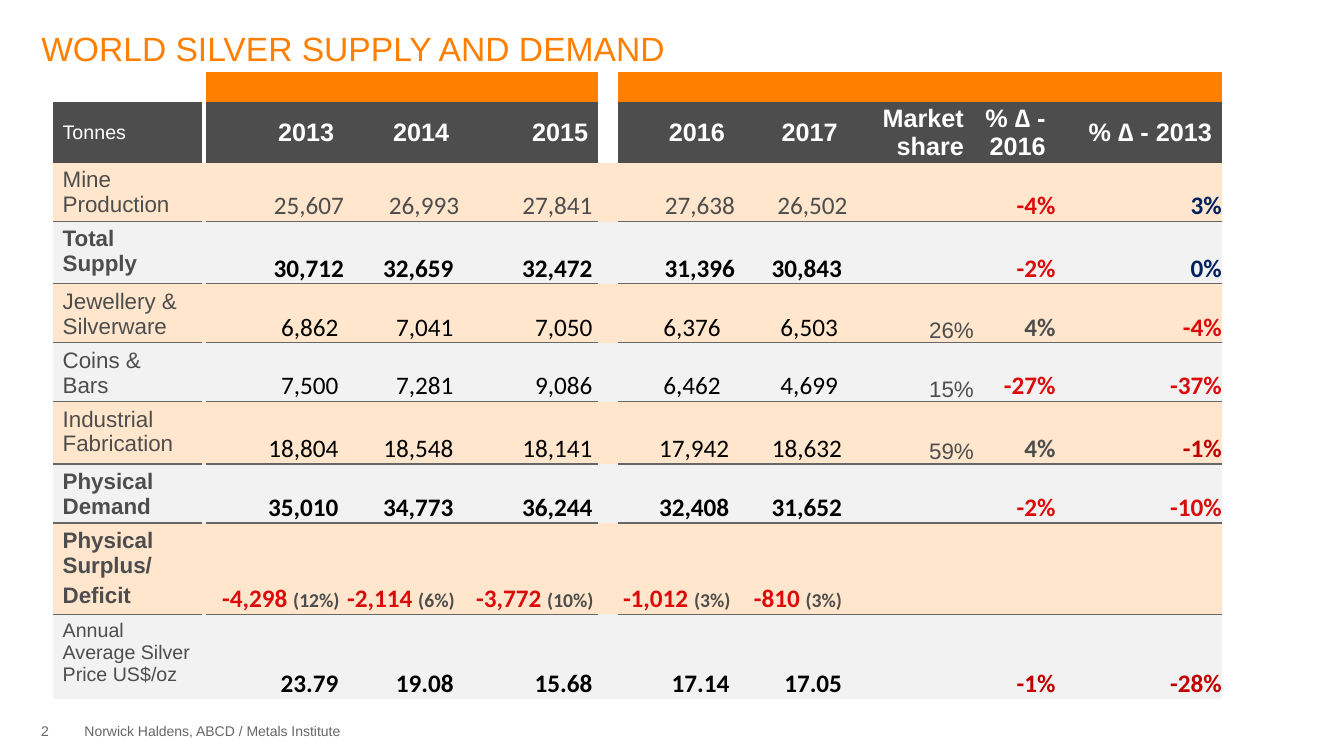
from dataclasses import dataclass

from lxml.etree import SubElement
from pptx import Presentation
from pptx.dml.color import RGBColor
from pptx.enum.text import MSO_ANCHOR, PP_ALIGN
from pptx.oxml import parse_xml
from pptx.oxml.ns import nsdecls, qn
from pptx.util import Cm, Pt

COLORS = {
    "orange": "FF8000", "peach": "FFE6CC", "light": "F2F2F2", "dark": "4D4D4D",
    "rule": "666666", "white": "FFFFFF", "black": "000000",
    "red": "DC0A0A", "deep_red": "C00000", "navy": "002060",
}
NO_STYLE = "{2D5ABB26-0587-4C30-8999-92F81FD0307C}"
COLUMN_WIDTHS = (3.76, 0.08, 3.48, 2.9, 3.5, 0.5, 2.95, 2.84, 3.18, 2.06, 4.19)
BAND_HEIGHT, HEADER_HEIGHT = 0.76, 1.47
SPACERS = (1, 5)
YEAR_COLUMNS = (2, 3, 4, 6, 7)
SHARE, CHANGE_2016, CHANGE_2013 = 8, 9, 10
HEADINGS = {2: "2013", 3: "2014", 4: "2015", 6: "2016", 7: "2017",
            SHARE: "Market share", CHANGE_2016: "% ∆ - 2016", CHANGE_2013: "% ∆ - 2013"}
GAP = 0.14  # inset that keeps a figure off the right cell edge
INDENT = 1.15  # inset of the left-aligned figures


@dataclass
class Style:
    size: float
    color: str
    bold: bool = False
    font: str = "Arial"


@dataclass
class Row:
    labels: tuple[str, ...]
    figures: tuple[str, ...]
    changes: tuple[tuple[str, str], ...] = ()
    height: float = 1.42
    label_size: float = 16
    label_bold: bool = False
    figure_bold: bool = False
    figure_color: str = "black"
    insets: tuple[float, ...] = (GAP,) * 5
    left_years: tuple[int, ...] = ()
    share: str = ""
    ratios: tuple[str, ...] = ()


LEFT_PAIR = (GAP, GAP, GAP, INDENT, INDENT)
ROWS = [
    Row(("Mine Production",), ("25,607", "26,993", "27,841", "27,638", "26,502"),
        (("-4%", "red"), ("3%", "navy")), figure_color="dark", insets=(0, 0, GAP, 0, 0)),
    Row(("Total Supply",), ("30,712", "32,659", "32,472", "31,396", "30,843"),
        (("-2%", "red"), ("0%", "navy")), height=1.57, label_bold=True,
        figure_bold=True, insets=(0, GAP, GAP, 0, GAP)),
    Row(("Jewellery & Silverware",), ("6,862", "7,041", "7,050", "6,376", "6,503"),
        (("4%", "dark"), ("-4%", "red")), insets=LEFT_PAIR, left_years=(6, 7), share="26%"),
    Row(("Coins & Bars",), ("7,500", "7,281", "9,086", "6,462", "4,699"),
        (("-27%", "red"), ("-37%", "red")), insets=LEFT_PAIR, left_years=(6, 7), share="15%"),
    Row(("Industrial Fabrication",), ("18,804", "18,548", "18,141", "17,942", "18,632"),
        (("4%", "dark"), ("-1%", "deep_red")), height=1.57, share="59%"),
    Row(("Physical Demand",), ("35,010", "34,773", "36,244", "32,408", "31,652"),
        (("-2%", "red"), ("-10%", "red")), label_bold=True, figure_bold=True),
    Row(("Physical Surplus/", "Deficit"), ("-4,298", "-2,114", "-3,772", "-1,012", "-810"),
        height=2.22, label_bold=True, figure_bold=True, figure_color="red",
        insets=(0.11, 0.11, 0.11, 0.11, GAP),
        ratios=("(12%)", "(6%)", "(10%)", "(3%)", "(3%)")),
    Row(("Annual Average Silver Price US$/oz",), ("23.79", "19.08", "15.68", "17.14", "17.05"),
        (("-1%", "deep_red"), ("-28%", "deep_red")), height=2.14, label_size=14,
        figure_bold=True),
]


def add_run(paragraph, text: str, style: Style) -> None:
    run = paragraph.add_run()
    run.text = text
    run.font.name = style.font
    run.font.size = Pt(style.size)
    run.font.bold = style.bold
    run.font.color.rgb = RGBColor.from_string(COLORS[style.color])


def clear_insets(frame) -> None:
    frame.margin_left = frame.margin_top = frame.margin_right = frame.margin_bottom = 0


def set_insets(cell, left: float, top: float, right: float) -> None:
    cell.margin_left, cell.margin_top = Cm(left), Cm(top)
    cell.margin_right, cell.margin_bottom = Cm(right), Cm(0)


def fill_cell(cell, color: str) -> None:
    cell.fill.solid()
    cell.fill.fore_color.rgb = RGBColor.from_string(COLORS[color])


def rule_below(cell) -> None:
    line = parse_xml(
        f'<a:lnB {nsdecls("a")} w="12700"><a:solidFill>'
        f'<a:srgbClr val="{COLORS["rule"]}"/></a:solidFill></a:lnB>')
    cell._tc.get_or_add_tcPr().insert(0, line)


def write_value(cell, parts: list[tuple[str, Style]], inset: float = 0,
                left: bool = False) -> None:
    set_insets(cell, inset if left else 0, 0, 0 if left else inset)
    cell.vertical_anchor = MSO_ANCHOR.BOTTOM
    paragraph = cell.text_frame.paragraphs[0]
    paragraph.alignment = PP_ALIGN.LEFT if left else PP_ALIGN.RIGHT
    for text, style in parts:
        add_run(paragraph, text, style)


def write_label(cell, lines: tuple[str, ...], style: Style) -> None:
    set_insets(cell, 0.25, 0.13, 0.25)
    frame = cell.text_frame
    for index, line in enumerate(lines):
        paragraph = frame.add_paragraph() if index else frame.paragraphs[0]
        paragraph.space_after = Pt(4)
        add_run(paragraph, line, style)


def draw_header(table) -> None:
    # Orange band over the year groups
    for first, last in ((2, 4), (6, 7), (8, 9), (10, 10)):
        if last > first:
            table.cell(0, first).merge(table.cell(0, last))
        fill_cell(table.cell(0, first), "orange")
    # Dark heading cells
    for column, text in {0: "Tonnes", **HEADINGS}.items():
        cell = table.cell(1, column)
        fill_cell(cell, "dark")
        set_insets(cell, 0.25, 0, 0.25)
        cell.vertical_anchor = MSO_ANCHOR.MIDDLE
        paragraph = cell.text_frame.paragraphs[0]
        if column:
            paragraph.alignment = PP_ALIGN.RIGHT
            paragraph.space_after = Pt(4)
        add_run(paragraph, text, Style(18 if column else 14, "white", bold=column > 0))


def draw_row(table, index: int, row: Row, is_last: bool) -> None:
    for column in range(len(COLUMN_WIDTHS)):
        cell = table.cell(index, column)
        fill_cell(cell, "light" if index % 2 else "peach")
        if column not in SPACERS and not is_last:
            rule_below(cell)
    write_label(table.cell(index, 0), row.labels, Style(row.label_size, "dark", row.label_bold))
    figure_style = Style(18, row.figure_color, row.figure_bold, "Calibri")
    for position, column in enumerate(YEAR_COLUMNS):
        parts = [(row.figures[position], figure_style)]
        if row.ratios:
            parts = [(row.figures[position] + " ", figure_style),
                     (row.ratios[position], Style(14, "dark", True, "Calibri"))]
        write_value(table.cell(index, column), parts, row.insets[position],
                    column in row.left_years)
    if row.share:
        write_value(table.cell(index, SHARE), [(row.share, Style(16, "dark"))])
    for column, (text, color) in zip((CHANGE_2016, CHANGE_2013), row.changes):
        write_value(table.cell(index, column), [(text, Style(18, color, True, "Calibri"))])


def draw_table(slide) -> None:
    heights = [BAND_HEIGHT, HEADER_HEIGHT] + [row.height for row in ROWS]
    frame = slide.shapes.add_table(len(heights), len(COLUMN_WIDTHS), Cm(1.33), Cm(1.81),
                                   Cm(sum(COLUMN_WIDTHS)), Cm(sum(heights)))
    table = frame.table
    table.first_row = table.horz_banding = False
    properties = table._tbl.tblPr
    style_id = properties.find(qn("a:tableStyleId"))
    if style_id is None:
        style_id = SubElement(properties, qn("a:tableStyleId"))
    style_id.text = NO_STYLE
    for column, width in zip(table.columns, COLUMN_WIDTHS):
        column.width = Cm(width)
    for table_row, height in zip(table.rows, heights):
        table_row.height = Cm(height)
    for cell in table.iter_cells():
        set_insets(cell, 0, 0, 0)
    draw_header(table)
    for index, row in enumerate(ROWS, start=2):
        draw_row(table, index, row, row is ROWS[-1])


def draw_title(slide) -> None:
    title = slide.shapes.title
    title.left, title.top, title.width, title.height = Cm(1.04), Cm(0.81), Cm(28.6), Cm(1.19)
    frame = title.text_frame
    clear_insets(frame)
    frame.vertical_anchor = MSO_ANCHOR.TOP
    paragraph = frame.paragraphs[0]
    paragraph.alignment = PP_ALIGN.LEFT
    paragraph.line_spacing = 0.9
    add_run(paragraph, "WORLD SILVER SUPPLY AND DEMAND", Style(24, "orange"))


def draw_footer_text(slide, text: str, left: float, width: float) -> None:
    box = slide.shapes.add_textbox(Cm(left), Cm(18.21), Cm(width), Cm(0.84))
    frame = box.text_frame
    clear_insets(frame)
    frame.word_wrap = True
    add_run(frame.paragraphs[0], text, Style(10, "rule"))


def main() -> None:
    presentation = Presentation()
    presentation.slide_width, presentation.slide_height = Cm(33.87), Cm(19.05)
    slide = presentation.slides.add_slide(presentation.slide_layouts[5])
    draw_footer_text(slide, "2", 1.04, 1.07)
    draw_footer_text(slide, "Norwick Haldens, ABCD / Metals Institute", 2.13, 14.78)
    draw_title(slide)
    draw_table(slide)
    presentation.save("out.pptx")


if __name__ == "__main__":
    main()
